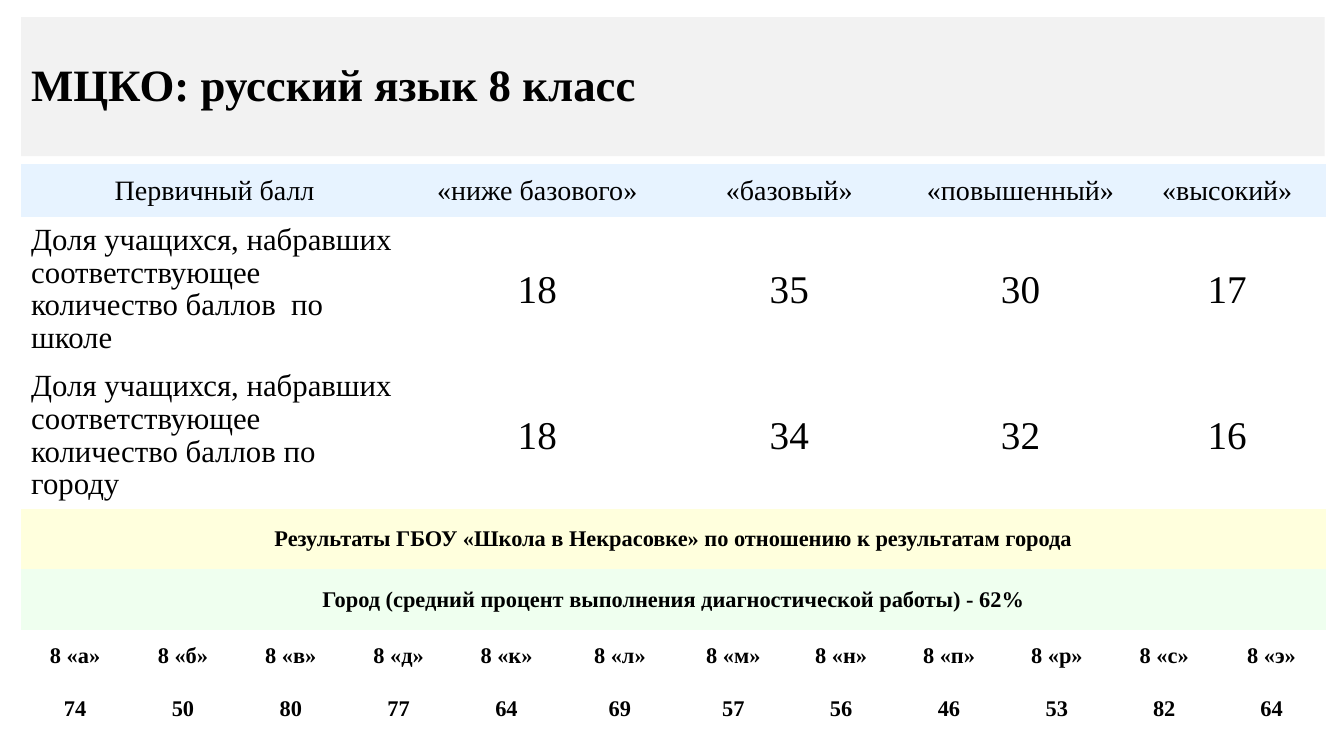
import itertools

import pptx
import pptx.dml.color
import pptx.enum.shapes
import pptx.enum.text
import pptx.util

Inches = pptx.util.Inches
RGBColor = pptx.dml.color.RGBColor
PP_ALIGN = pptx.enum.text.PP_ALIGN

BLACK = RGBColor(0x00, 0x00, 0x00)
WHITE = RGBColor(0xFF, 0xFF, 0xFF)
GRAY = RGBColor(0xF2, 0xF2, 0xF2)
BLUE = RGBColor(0xE7, 0xF3, 0xFF)
YELLOW = RGBColor(0xFF, 0xFF, 0xDD)
GREEN = RGBColor(0xEF, 0xFF, 0xEF)
FONT = "Times New Roman"
NO_STYLE_NO_GRID = "{2D5ABB26-0587-4C30-8999-92F81FD0307C}"

TITLE = "МЦКО: русский язык 8 класс"
LEVELS = ["Первичный балл", "«ниже базового»", "«базовый»", "«повышенный»", "«высокий»"]
SCHOOL = ["Доля учащихся, набравших соответствующее количество баллов  по школе",
          "18", "35", "30", "17"]
CITY = ["Доля учащихся, набравших соответствующее количество баллов по городу",
        "18", "34", "32", "16"]
RESULTS = ["Результаты ГБОУ «Школа в Некрасовке» по отношению к результатам города"]
CITY_MEAN = ["Город (средний процент выполнения диагностической работы) - 62%"]
CLASSES = [f"8 «{letter}»" for letter in "абвдклмнпрсэ"]
PERCENTS = ["74", "50", "80", "77", "64", "69", "57", "56", "46", "53", "82", "64"]

LEVEL_SPANS = [4, 3, 4, 3, 2]
CLASS_SPANS = [1, 1, 1, 2, 1, 2, 1, 1, 2, 1, 2, 1]
FULL_SPAN = [16]

NORMAL = {"size": 20}
SHARE = {"size": 28}
BOLD = {"size": 16, "bold": True}
LABEL = {"size": 22, "align": PP_ALIGN.LEFT, "spacing": 0.96}

ROWS = [
    (LEVELS, LEVEL_SPANS, 0.52, BLUE, NORMAL, NORMAL),
    (SCHOOL, LEVEL_SPANS, 1.45, WHITE, LABEL, SHARE),
    (CITY, LEVEL_SPANS, 1.45, WHITE, LABEL, SHARE),
    (RESULTS, FULL_SPAN, 0.6, YELLOW, BOLD, BOLD),
    (CITY_MEAN, FULL_SPAN, 0.6, GREEN, BOLD, BOLD),
    (CLASSES, CLASS_SPANS, 0.52, WHITE, BOLD, BOLD),
    (PERCENTS, CLASS_SPANS, 0.52, WHITE, BOLD, BOLD),
]
COLUMN_WIDTHS = [1.07, 1.07, 1.07, 0.63, 0.44, 1.07, 1.05, 0.13,
                 1.07, 1.07, 0.17, 0.9, 1.07, 0.18, 0.88, 1.07]
LEFT, WIDTH = 0.21, 12.93
TITLE_TOP, TITLE_HEIGHT, TABLE_TOP = 0.17, 1.38, 1.63


def write(frame, text, size, bold=False, align=PP_ALIGN.CENTER, spacing=None):
    frame.word_wrap = True
    paragraph = frame.paragraphs[0]
    paragraph.alignment = align
    if spacing:
        paragraph.line_spacing = spacing
    run = paragraph.add_run()
    run.text = text
    run.font.name = FONT
    run.font.size = pptx.util.Pt(size)
    run.font.bold = bold
    run.font.color.rgb = BLACK


def add_title(slide):
    banner = slide.shapes.add_shape(
        pptx.enum.shapes.MSO_SHAPE.RECTANGLE, Inches(LEFT), Inches(TITLE_TOP),
        Inches(WIDTH), Inches(TITLE_HEIGHT))
    banner.shadow.inherit = False
    banner.fill.solid()
    banner.fill.fore_color.rgb = GRAY
    banner.line.fill.background()
    banner.text_frame.vertical_anchor = pptx.enum.text.MSO_ANCHOR.MIDDLE
    write(banner.text_frame, TITLE, size=32, bold=True, align=PP_ALIGN.LEFT, spacing=0.9)


def add_scores(slide):
    height = sum(row[2] for row in ROWS)
    scores = slide.shapes.add_table(
        len(ROWS), len(COLUMN_WIDTHS), Inches(LEFT), Inches(TABLE_TOP),
        Inches(WIDTH), Inches(height)).table
    scores.first_row = scores.horz_banding = False
    scores._tbl.tblPr[0].text = NO_STYLE_NO_GRID
    for column, width in zip(scores.columns, COLUMN_WIDTHS):
        column.width = Inches(width)
    for r, (texts, spans, row_height, color, first, rest) in enumerate(ROWS):
        scores.rows[r].height = Inches(row_height)
        starts = itertools.accumulate([0] + spans[:-1])
        for i, (text, start, span) in enumerate(zip(texts, starts, spans)):
            cell = scores.cell(r, start)
            if span > 1:
                cell.merge(scores.cell(r, start + span - 1))
            cell.fill.solid()
            cell.fill.fore_color.rgb = color
            cell.vertical_anchor = pptx.enum.text.MSO_ANCHOR.MIDDLE
            write(cell.text_frame, text, **(rest if i else first))


def main():
    deck = pptx.Presentation()
    deck.slide_width, deck.slide_height = Inches(13.33), Inches(7.5)
    slide = deck.slides.add_slide(deck.slide_layouts[6])
    add_title(slide)
    add_scores(slide)
    deck.save("out.pptx")


if __name__ == "__main__":
    main()
